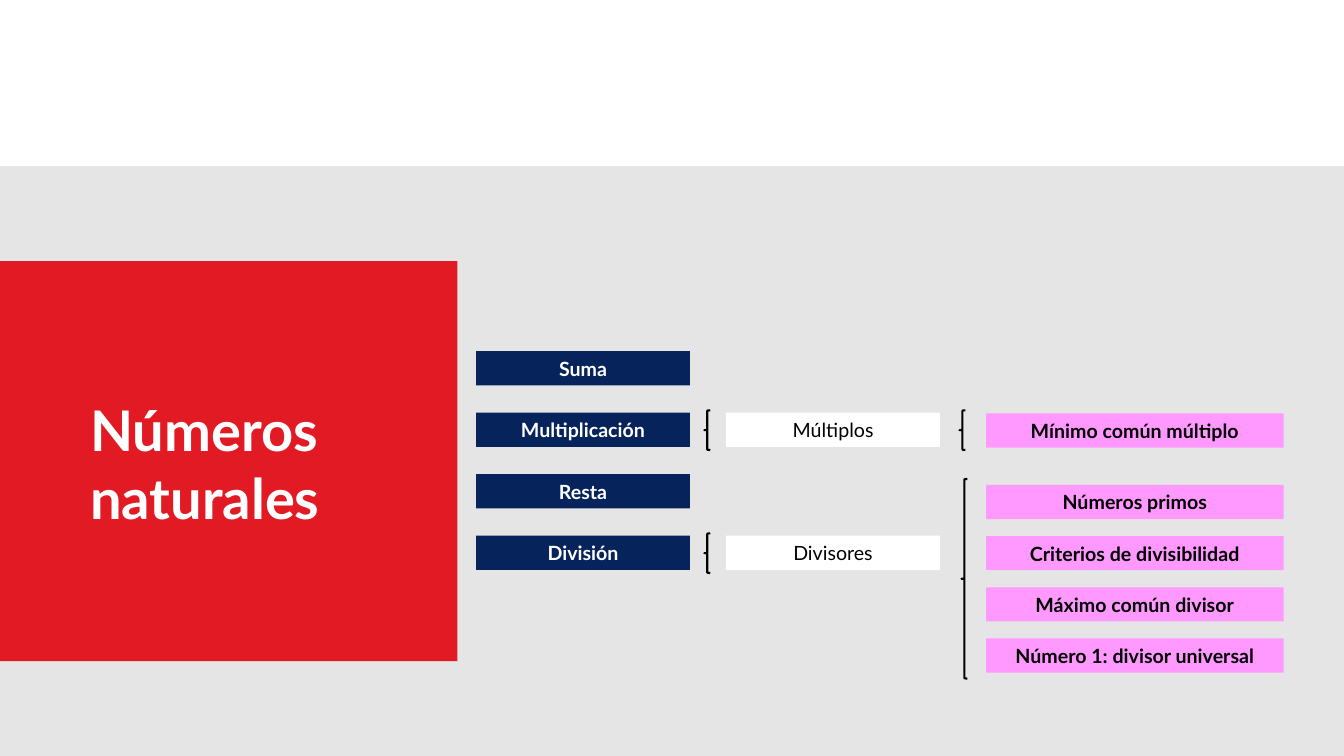
from pptx import Presentation
from pptx.dml.color import RGBColor
from pptx.enum.shapes import MSO_SHAPE as SHAPE
from pptx.enum.text import MSO_ANCHOR as ANCHOR, MSO_AUTO_SIZE as AUTO, PP_ALIGN as ALIGN
from pptx.util import Cm, Pt


def color(value):
    return RGBColor.from_string(value)


def write(sp, text, size, ink, bold, align):
    tf = sp.text_frame
    for name, value in dict(word_wrap=True, auto_size=AUTO.SHAPE_TO_FIT_TEXT,
                            vertical_anchor=ANCHOR.MIDDLE).items():
        setattr(tf, name, value)
    p = tf.paragraphs[0]
    p.alignment = align
    r = p.add_run()
    r.text = text
    for name, value in dict(name="Lato", size=Pt(size), bold=bold).items():
        setattr(r.font, name, value)
    r.font.color.rgb = color(ink)


prs = Presentation()
prs.slide_width, prs.slide_height = Cm(33.87), Cm(19.05)
s = prs.slides.add_slide(prs.slide_layouts[6])

PANELS = [(0, 4.19, 33.87, 14.86, "E5E5E5"), (0, 6.58, 11.53, 10.08, "E21A23")]
for x, y, w, h, fill in PANELS:
    sp = s.shapes.add_shape(SHAPE.RECTANGLE, Cm(x), Cm(y), Cm(w), Cm(h))
    sp.shadow.inherit = False
    sp.fill.solid()
    sp.fill.fore_color.rgb = color(fill)
    sp.line.fill.background()

title = s.shapes.add_textbox(Cm(2.03), Cm(9.83), Cm(7.47), Cm(3.68))
write(title, "Números naturales", 40, "FFFFFF", True, ALIGN.LEFT)

COLUMNS = [
    (12, 8.85, 5.39, 1.55, "06235B", "FFFFFF", True,
     ["Suma", "Multiplicación", "Resta", "División"]),
    (18.3, 10.4, 5.39, 3.1, "FFFFFF", "000000", False, ["Múltiplos", "Divisores"]),
    (24.85, 10.42, 7.5, 0, "FF99FF", "000000", True, ["Mínimo común múltiplo"]),
    (24.85, 12.22, 7.5, 1.29, "FF99FF", "000000", True,
     ["Números primos", "Criterios de divisibilidad", "Máximo común divisor",
      "Número 1: divisor universal"]),
]
for x, top, w, step, fill, ink, bold, labels in COLUMNS:
    for i, label in enumerate(labels):
        sp = s.shapes.add_shape(SHAPE.RECTANGLE, Cm(x), Cm(top + i * step), Cm(w), Cm(0.86))
        sp.shadow.inherit = False
        sp.fill.solid()
        sp.fill.fore_color.rgb = color(fill)
        sp.line.fill.background()
        write(sp, label, 14, ink, bold, ALIGN.CENTER)

BRACES = [(17.75, 10.34, 1), (24.18, 10.34, 1), (17.75, 13.44, 1), (24.23, 12.07, 5.03)]
for x, y, h in BRACES:
    sp = s.shapes.add_shape(SHAPE.LEFT_BRACE, Cm(x), Cm(y), Cm(0.15), Cm(h))
    sp.shadow.inherit = False
    sp.fill.background()
    sp.line.color.rgb = color("000000")
    sp.line.width = Pt(1.5)

prs.save("out.pptx")
